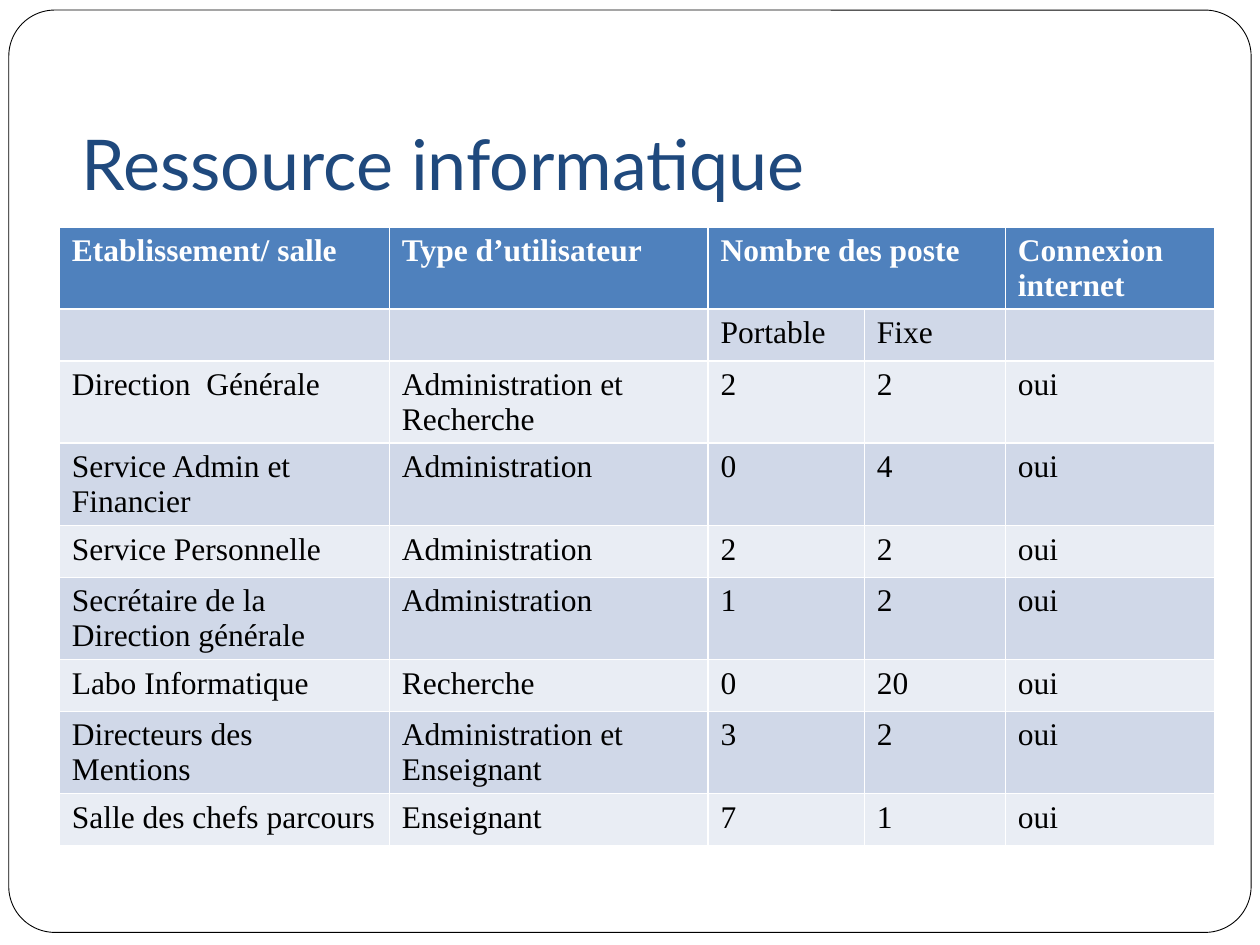
import pptx
import pptx.util
import pptx.dml.color
import pptx.enum.shapes
import pptx.enum.text

RGBColor = pptx.dml.color.RGBColor
Inches = pptx.util.Inches
Pt = pptx.util.Pt

WHITE = RGBColor(0xFF, 0xFF, 0xFF)
BLACK = RGBColor(0x00, 0x00, 0x00)
NAVY = RGBColor(0x1F, 0x49, 0x7D)
HEADER_BLUE = RGBColor(0x4F, 0x81, 0xBD)
BAND_DARK = RGBColor(0xD0, 0xD8, 0xE8)
BAND_LIGHT = RGBColor(0xE9, 0xED, 0xF4)

COLUMN_WIDTHS = (2.62, 2.53, 1.24, 1.12, 1.66)
HEADER_HEIGHT = 0.63
ROW_HEIGHT = 0.41

RESOURCES = (
    ("Etablissement/ salle", "Type d’utilisateur", "Nombre des poste", "", "Connexion internet"),
    ("", "", "Portable", "Fixe", ""),
    ("Direction  Générale", "Administration et Recherche", "2", "2", "oui"),
    ("Service Admin et Financier", "Administration", "0", "4", "oui"),
    ("Service Personnelle", "Administration", "2", "2", "oui"),
    ("Secrétaire de la Direction générale", "Administration", "1", "2", "oui"),
    ("Labo Informatique", "Recherche", "0", "20", "oui"),
    ("Directeurs des Mentions", "Administration et Enseignant", "3", "2", "oui"),
    ("Salle des chefs parcours", "Enseignant", "7", "1", "oui"),
)


def format_font(font, family, size, color, bold=False):
    font.name = family
    font.size = Pt(size)
    font.color.rgb = color
    font.bold = bold


def add_frame(slide):
    frame = slide.shapes.add_shape(
        pptx.enum.shapes.MSO_SHAPE.ROUNDED_RECTANGLE,
        Inches(0.07), Inches(0.08), Inches(9.86), Inches(7.32))
    frame.adjustments[0] = 0.05
    frame.shadow.inherit = False
    frame.fill.solid()
    frame.fill.fore_color.rgb = WHITE
    frame.line.color.rgb = BLACK
    frame.line.width = Pt(0.5)


def set_title(slide, wording):
    title = slide.shapes.title
    slide.shapes.element.append(title.element)
    title.left, title.top = Inches(0.55), Inches(0.47)
    title.width, title.height = Inches(9), Inches(1.25)
    text_frame = title.text_frame
    text_frame.text = wording
    text_frame.margin_bottom = Inches(0.1)
    text_frame.vertical_anchor = pptx.enum.text.MSO_ANCHOR.BOTTOM
    paragraph = text_frame.paragraphs[0]
    paragraph.alignment = pptx.enum.text.PP_ALIGN.LEFT
    format_font(paragraph.runs[0].font, "Lato", 40, NAVY)


def fill_cell(cell, wording, row_index):
    is_header = row_index == 0
    cell.fill.solid()
    if is_header:
        cell.fill.fore_color.rgb = HEADER_BLUE
    else:
        cell.fill.fore_color.rgb = BAND_DARK if row_index % 2 else BAND_LIGHT
    cell.text_frame.text = wording
    for run in cell.text_frame.paragraphs[0].runs:
        format_font(run.font, "Times New Roman", 18, WHITE if is_header else BLACK, is_header)


def add_resource_table(slide):
    heights = [HEADER_HEIGHT] + [ROW_HEIGHT] * (len(RESOURCES) - 1)
    table = slide.shapes.add_table(
        len(RESOURCES), len(COLUMN_WIDTHS), Inches(0.47), Inches(1.8),
        Inches(sum(COLUMN_WIDTHS)), Inches(sum(heights))).table
    for column, width in zip(table.columns, COLUMN_WIDTHS):
        column.width = Inches(width)
    for row_index, (row, height, wordings) in enumerate(zip(table.rows, heights, RESOURCES)):
        row.height = Inches(height)
        for cell, wording in zip(row.cells, wordings):
            fill_cell(cell, wording, row_index)
    table.cell(0, 2).merge(table.cell(0, 3))


def main():
    presentation = pptx.Presentation()
    presentation.slide_width = Inches(10)
    presentation.slide_height = Inches(7.5)
    slide = presentation.slides.add_slide(presentation.slide_layouts.get_by_name("Title Only"))
    add_frame(slide)
    set_title(slide, "Ressource informatique")
    add_resource_table(slide)
    presentation.save("out.pptx")


if __name__ == "__main__":
    main()
